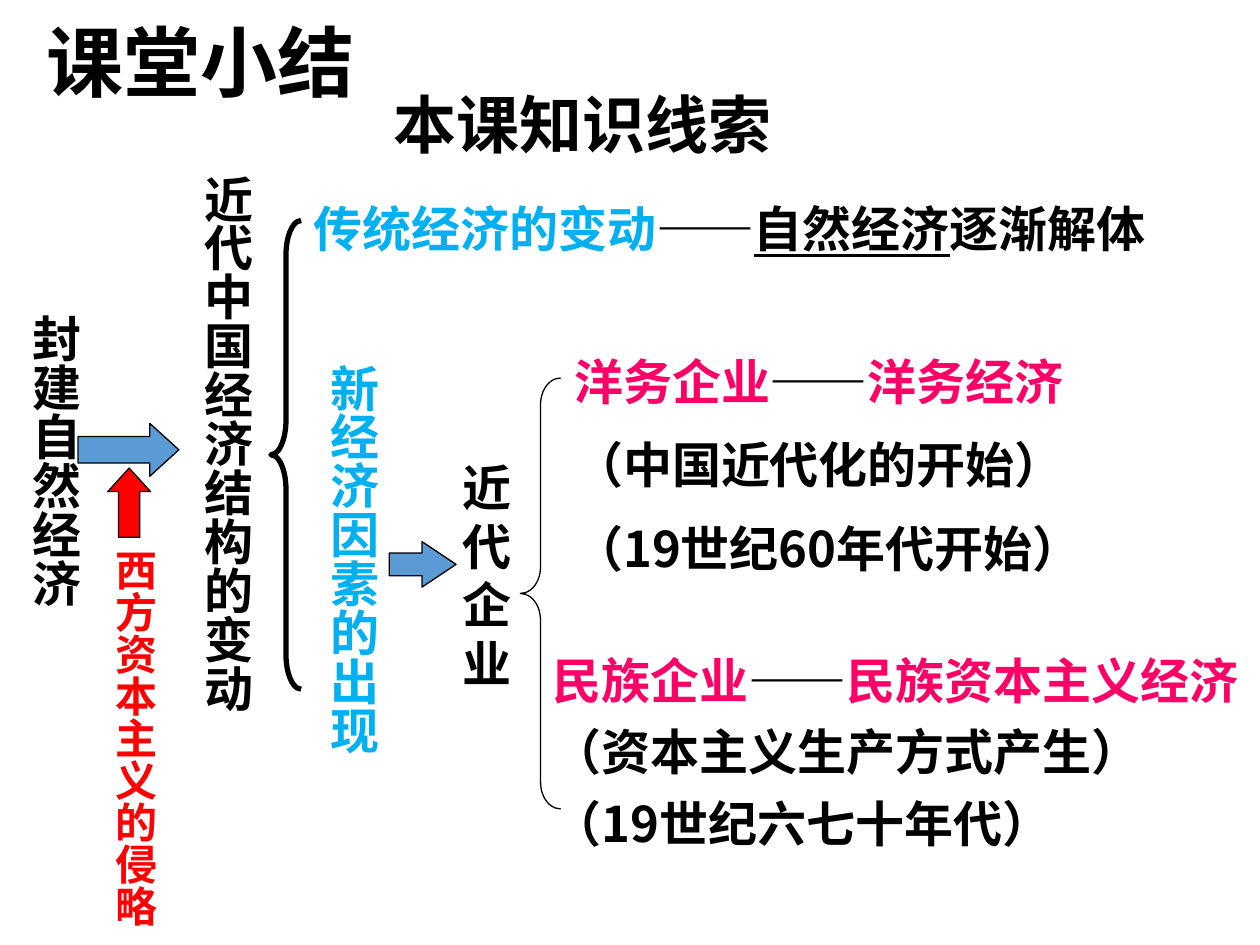
from pptx import Presentation
from pptx import util as u
from pptx.dml.color import RGBColor
from pptx.enum import shapes, text
from pptx.oxml.ns import qn
from lxml import etree

BLACK = RGBColor(0x00, 0x00, 0x00)
CYAN = RGBColor(0x00, 0xB0, 0xF0)
PINK = RGBColor(0xFF, 0x00, 0x66)
RED = RGBColor(0xFF, 0x00, 0x00)
BLUE = RGBColor(0x5B, 0x9B, 0xD5)

HAN = "Noto Sans CJK SC"
WIDTH, HEIGHT = u.Inches(10), u.Inches(7.5)


def frame(left, top, width, height):
    """Turn percentages of the slide's size into lengths."""
    return (round(WIDTH * left / 100), round(HEIGHT * top / 100),
            round(WIDTH * width / 100), round(HEIGHT * height / 100))


def add_text(slide, place, *lines, size=28, font=HAN, color=BLACK, before=14,
             spacing=None, vertical=False, indent=0.1,
             anchor=text.MSO_ANCHOR.TOP):
    """Each line is a string or a list of (wording, colour, underlined)."""
    body = slide.shapes.add_textbox(*frame(*place)).text_frame
    body.word_wrap = True
    body.auto_size = text.MSO_AUTO_SIZE.SHAPE_TO_FIT_TEXT
    body.vertical_anchor = anchor
    body.margin_left = u.Inches(indent)
    if vertical:
        body._txBody.bodyPr.set("vert", "eaVert")
    for number, line in enumerate(lines):
        paragraph = body.add_paragraph() if number else body.paragraphs[0]
        paragraph.space_before = u.Pt(before)
        if spacing:
            paragraph.line_spacing = spacing
        parts = [(line, color, False)] if isinstance(line, str) else line
        for wording, part_color, underlined in parts:
            run = paragraph.add_run()
            run.text = wording
            run.font.size = u.Pt(size)
            run.font.bold = True
            run.font.underline = underlined
            run.font.color.rgb = part_color
            run.font.name = font
            if font == HAN:
                east_asian = etree.SubElement(run.font._element, qn("a:ea"))
                east_asian.set("typeface", font)


def add_preset(slide, kind, place, adjustments, fill=None, line=0.75, turn=0):
    shape = slide.shapes.add_shape(kind, *frame(*place))
    shape.shadow.inherit = False
    shape.rotation = turn
    for number, value in enumerate(adjustments):
        shape.adjustments[number] = value
    if fill is None:
        shape.fill.background()
    else:
        shape.fill.solid()
        shape.fill.fore_color.rgb = fill
    shape.line.color.rgb = BLACK
    shape.line.width = u.Pt(line)


def add_brace(slide, place, curve, line):
    add_preset(slide, shapes.MSO_SHAPE.LEFT_BRACE, place, (curve, 0.5),
               line=line)


def add_arrow(slide, place, head, fill=BLUE, turn=0):
    add_preset(slide, shapes.MSO_SHAPE.RIGHT_ARROW, place, (0.5, head),
               fill=fill, turn=turn)


def pair(enterprise, economy):
    """Two pink terms joined by a black dash."""
    return [(enterprise, PINK, False), ("——", BLACK, False),
            (economy, PINK, False)]


def main():
    deck = Presentation()
    deck.slide_width, deck.slide_height = WIDTH, HEIGHT
    slide = deck.slides.add_slide(deck.slide_layouts[6])

    # Headings
    add_text(slide, (28, 9.33, 39.4, 8.53), "本课知识线索", size=36,
             font="Arial", before=0, spacing=0.9, indent=0.32,
             anchor=text.MSO_ANCHOR.MIDDLE)
    add_text(slide, (2.7, 2.8, 94.5, 9.2), "课堂小结", size=44, before=0,
             spacing=0.8)

    # Change of the traditional economy
    add_brace(slide, (21.5, 23.33, 2.4, 49.6), 1.14, 3)
    add_text(slide, (23.9, 20.4, 71.5, 7.6),
             [("传统经济的变动", CYAN, False), ("——", BLACK, False),
              ("自然经济", BLACK, True), ("逐渐解体", BLACK, False)])

    # Two kinds of modern enterprise
    add_text(slide, (44.6, 36.53, 55.4, 26.53), pair("洋务企业", "洋务经济"),
             "（中国近代化的开始）", "（19世纪60年代开始）")
    add_text(slide, (42.9, 69.33, 57.1, 22.67),
             pair("民族企业", "民族资本主义经济"),
             "（资本主义生产方式产生）", "（19世纪六七十年代）", spacing=0.8)

    # From the feudal economy to the modern structure
    add_text(slide, (14.2, 17.2, 6.7, 62.93), "近代中国经济结构的变动",
             font="Arial", vertical=True)
    add_text(slide, (0.5, 32, 6.7, 36.93), "封建自然经济",
             font="Arial", vertical=True)
    add_arrow(slide, (6.2, 44.8, 8, 5.6), 0.55)

    # New economic factors
    add_text(slide, (24.2, 37.2, 6.7, 48.13), "新经济因素的出现",
             color=CYAN, vertical=True)
    add_brace(slide, (41.3, 40, 3.2, 45.6), 0.66, 0.75)
    add_arrow(slide, (30.9, 57.33, 5.3, 4.8), 0.75)
    add_text(slide, (35.7, 47.73, 7.1, 26.53), "近代企业")

    # Pressure from the West
    add_text(slide, (7.1, 56.8, 6.1, 44.93), "西方资本主义的侵略", size=24,
             font="Arial", color=RED, before=0, vertical=True)
    add_arrow(slide, (7.5, 50.93, 5.5, 4.53), 0.55, fill=RED, turn=270)

    deck.save("out.pptx")


if __name__ == "__main__":
    main()
